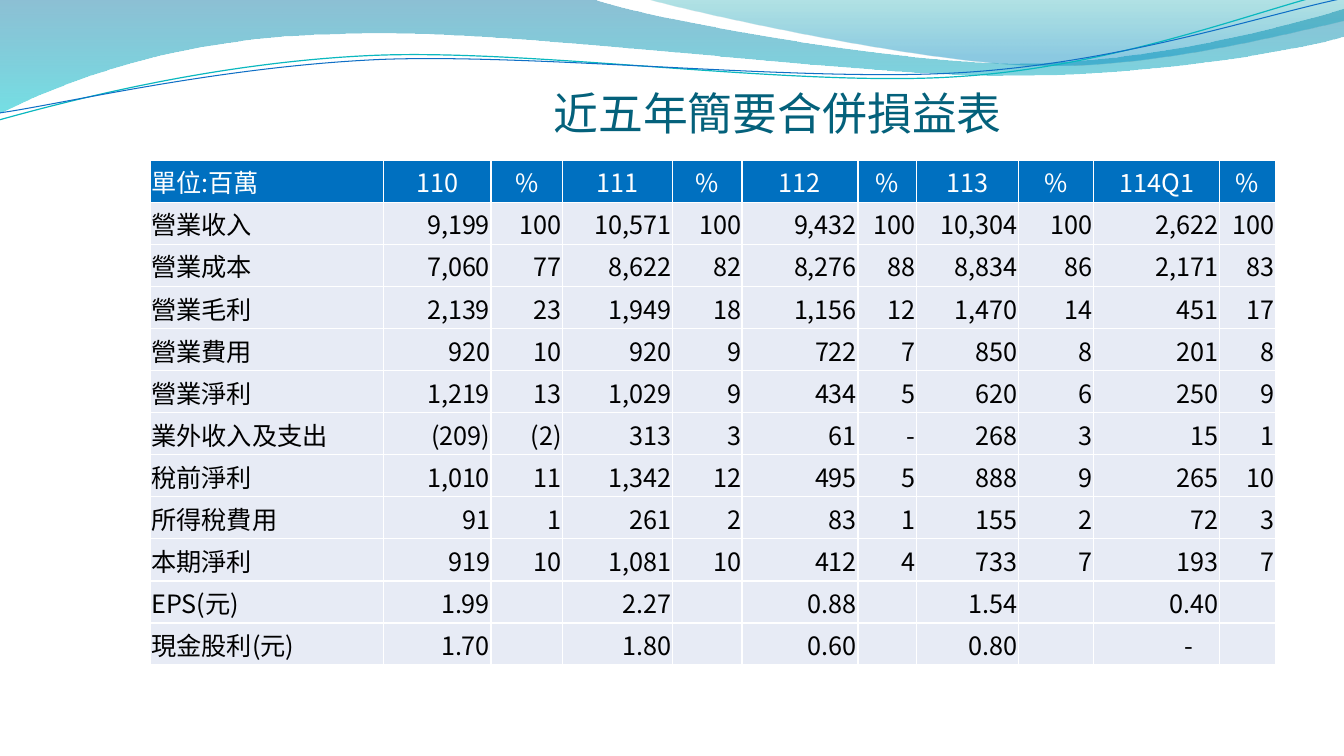
from dataclasses import dataclass

from lxml import etree
from pptx import Presentation
from pptx.dml.color import RGBColor
from pptx.enum.text import MSO_ANCHOR, PP_ALIGN
from pptx.oxml.ns import qn
from pptx.util import Inches, Pt

LEFT, CENTER, RIGHT = PP_ALIGN.LEFT, PP_ALIGN.CENTER, PP_ALIGN.RIGHT
MIDDLE, BOTTOM = MSO_ANCHOR.MIDDLE, MSO_ANCHOR.BOTTOM
TITLE_ONLY = 5


@dataclass(frozen=True)
class Theme:
    font: str = "Noto Sans CJK SC"
    title_size: int = 32
    table_size: int = 18
    title: str = "04617B"
    header_text: str = "FFFFFF"
    body_text: str = "000000"
    header_fill: str = "0070C0"
    body_fill: str = "E7EBF5"
    border: str = "FFFFFF"
    border_width: float = 1


@dataclass(frozen=True)
class Stop:
    position: float
    color: str
    opacity: int


@dataclass(frozen=True)
class Wave:
    """Segments hold one point for a straight line, three for a Bézier curve."""
    start: tuple
    segments: list
    stops: tuple = ()
    line_color: str = ""
    line_width: float = 0


THEME = Theme()

WAVES = [
    Wave((0, 0), [
        [(5.87, -0.01)],
        [(6.34, 0.17), (8.85, 0.63), (10.11, 0.63)],
        [(11.38, 0.63), (12.78, 0.26), (13.33, 0.09)],
        [(13.35, 0.36)],
        [(13.11, 0.44), (11.6, 0.76), (9.94, 0.75)],
        [(8.29, 0.75), (5.09, 0.28), (3.43, 0.34)],
        [(1.72, 0.36), (0.61, 0.83), (-0.01, 1.13)],
    ], stops=(Stop(0, "0074A1", 45), Stop(1, "00C6CF", 55))),
    Wave((6.39, -0.01), [
        [(6.79, 0.11), (9.09, 0.62), (10.25, 0.65)],
        [(11.41, 0.69), (12.82, 0.32), (13.33, 0.21)],
        [(13.33, 0)],
    ], stops=(Stop(0, "00A1A9", 30), Stop(0.8, "008BBF", 45))),
    Wave((-0.01, 1.19), [
        [(0.64, 1.01), (2.11, 0.62), (3.69, 0.55)],
        [(5.27, 0.48), (7.9, 0.87), (9.5, 0.76)],
        [(11.1, 0.66), (12.52, 0.08), (13.31, -0.1)],
    ], line_color="0AB8BF", line_width=0.85),
    Wave((0, 1.12), [
        [(0.63, 1.03), (2.18, 0.66), (3.78, 0.59)],
        [(5.37, 0.53), (7.96, 0.82), (9.55, 0.72)],
        [(11.15, 0.62), (12.55, 0.14), (13.34, -0.02)],
    ], line_color="0F6FC6", line_width=0.75),
]

COLUMN_WIDTHS = [2.31, 1.07, 0.71, 1.09, 0.69, 1.15, 0.58, 1.01, 0.75, 1.25, 0.55]
TABLE_HEIGHT = 5.01
INCOME_ROWS = [
    ["單位:百萬", "110", "%", "111", "%", "112", "%", "113", "%", "114Q1", "%"],
    ["營業收入", "9,199", "100", "10,571", "100", "9,432", "100", "10,304", "100", "2,622", "100"],
    ["營業成本", "7,060", "77", "8,622", "82", "8,276", "88", "8,834", "86", "2,171", "83"],
    ["營業毛利", "2,139", "23", "1,949", "18", "1,156", "12", "1,470", "14", "451", "17"],
    ["營業費用", "920", "10", "920", "9", "722", "7", "850", "8", "201", "8"],
    ["營業淨利", "1,219", "13", "1,029", "9", "434", "5", "620", "6", "250", "9"],
    ["業外收入及支出", "(209)", "(2)", "313", "3", "61", "-", "268", "3", "15", "1"],
    ["稅前淨利", "1,010", "11", "1,342", "12", "495", "5", "888", "9", "265", "10"],
    ["所得稅費用", "91", "1", "261", "2", "83", "1", "155", "2", "72", "3"],
    ["本期淨利", "919", "10", "1,081", "10", "412", "4", "733", "7", "193", "7"],
    ["EPS(元)", "1.99", "", "2.27", "", "0.88", "", "1.54", "", "0.40", ""],
    ["現金股利(元)", "1.70", "", "1.80", "", "0.60", "", "0.80", "", "-　", ""],
]


def format_text(frame, size: float, color: str, alignment) -> None:
    para = frame.paragraphs[0]
    para.alignment = alignment
    for span in para.runs:
        span.font.size = Pt(size)
        span.font.bold = False
        span.font.name = THEME.font
        span.font.color.rgb = RGBColor.from_string(color)
        etree.SubElement(span.font._element, qn("a:ea"), typeface=THEME.font)


def bend_segments(shape, segments: list) -> None:
    """Turn each run of three straight lines into one Bézier curve."""
    lines = iter(list(shape._element.iter(qn("a:lnTo"))))
    for segment in segments:
        first, *others = [next(lines) for _ in segment]
        if others:
            curve = etree.Element(qn("a:cubicBezTo"))
            first.addprevious(curve)
            for line in (first, *others):
                curve.append(line[0])
                line.getparent().remove(line)


def add_wave(page, wave: Wave) -> None:
    start_x, start_y = wave.start
    builder = page.shapes.build_freeform(Inches(start_x), Inches(start_y))
    points = [(Inches(x), Inches(y)) for segment in wave.segments for x, y in segment]
    builder.add_line_segments(points, close=bool(wave.stops))
    shape = builder.convert_to_shape()
    bend_segments(shape, wave.segments)
    shape.shadow.inherit = False
    if not wave.stops:
        shape.fill.background()
        shape.line.color.rgb = RGBColor.from_string(wave.line_color)
        shape.line.width = Pt(wave.line_width)
        return
    shape.line.fill.background()
    shape.fill.gradient()
    shape.fill.gradient_angle = 270
    for target, stop in zip(shape.fill.gradient_stops, wave.stops):
        target.position = stop.position
        target.color.rgb = RGBColor.from_string(stop.color)
    for color, stop in zip(shape._element.iter(qn("a:srgbClr")), wave.stops):
        etree.SubElement(color, qn("a:alpha"), val=str(stop.opacity * 1000))


def place_title(page, text: str) -> None:
    """Fill the title placeholder and bring it in front of the waves."""
    title = page.shapes.title
    title.left, title.top = Inches(2.84), Inches(0.68)
    title.width, title.height = Inches(9.75), Inches(0.7)
    frame = title.text_frame
    frame.text = text
    frame.vertical_anchor = BOTTOM
    frame.margin_left = frame.margin_right = frame.margin_bottom = 0
    frame.margin_top = Inches(0.05)
    format_text(frame, THEME.title_size, THEME.title, CENTER)
    page.shapes[-1]._element.addnext(title._element)


def add_borders(cell) -> None:
    properties = cell._tc.get_or_add_tcPr()
    for index, side in enumerate(("a:lnL", "a:lnR", "a:lnT", "a:lnB")):
        border = etree.Element(qn(side), w=str(Pt(THEME.border_width)))
        fill = etree.SubElement(border, qn("a:solidFill"))
        etree.SubElement(fill, qn("a:srgbClr"), val=THEME.border)
        properties.insert(index, border)


def add_income_table(page) -> None:
    table = page.shapes.add_table(
        len(INCOME_ROWS), len(COLUMN_WIDTHS), Inches(1.49), Inches(1.59),
        Inches(sum(COLUMN_WIDTHS)), Inches(TABLE_HEIGHT)).table
    table.horz_banding = False
    for column, width in zip(table.columns, COLUMN_WIDTHS):
        column.width = Inches(width)
    for row_index, values in enumerate(INCOME_ROWS):
        is_header = row_index == 0
        fill = THEME.header_fill if is_header else THEME.body_fill
        color = THEME.header_text if is_header else THEME.body_text
        for column_index, value in enumerate(values):
            cell = table.cell(row_index, column_index)
            cell.text_frame.text = value
            cell.vertical_anchor = MIDDLE
            cell.margin_left = cell.margin_right = cell.margin_top = Inches(0.01)
            cell.margin_bottom = 0
            cell.fill.solid()
            cell.fill.fore_color.rgb = RGBColor.from_string(fill)
            add_borders(cell)
            alignment = LEFT if column_index == 0 else CENTER if is_header else RIGHT
            format_text(cell.text_frame, THEME.table_size, color, alignment)


def main() -> None:
    deck = Presentation()
    deck.slide_width, deck.slide_height = Inches(13.33), Inches(7.5)
    page = deck.slides.add_slide(deck.slide_layouts[TITLE_ONLY])
    for wave in WAVES:
        add_wave(page, wave)
    place_title(page, "近五年簡要合併損益表")
    add_income_table(page)
    deck.save("out.pptx")


if __name__ == "__main__":
    main()
